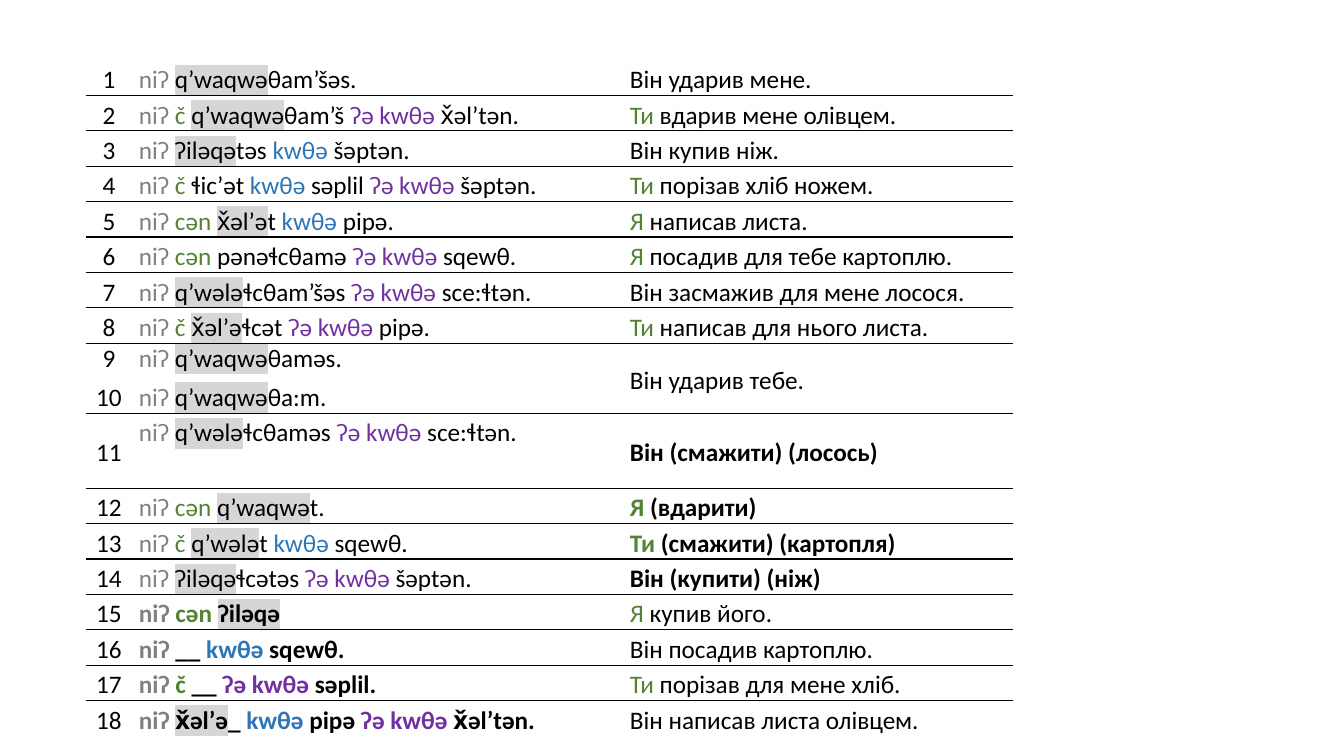
from pptx import Presentation
from pptx.dml.color import RGBColor
from pptx.enum.text import MSO_ANCHOR, PP_ALIGN
from pptx.oxml import parse_xml
from pptx.oxml.ns import nsdecls
from pptx.util import Pt

MIDDLE, TOP = MSO_ANCHOR.MIDDLE, MSO_ANCHOR.TOP
CENTER, LEFT = PP_ALIGN.CENTER, PP_ALIGN.LEFT
PX = 914400 / 100.8

THEME = {
    "font": "Calibri",
    "size": 18,
    "text": "000000",
    "stem": "000000",
    "particle": "808080",
    "subject": "548235",
    "object": "2E75B6",
    "oblique": "7030A0",
    "highlight": "D7D5D8",
    "rule": "000000",
}


def px(n):
    return round(n * PX)


def add_run(p, text, role, bold):
    r = p.add_run()
    r.text = text
    r.font.name = THEME["font"]
    r.font.size = Pt(THEME["size"])
    r.font.bold = bold
    r.font.color.rgb = RGBColor.from_string(THEME[role])
    if role == "stem":
        fill = r.font._element.find("{*}solidFill")
        fill.addnext(parse_xml(
            f'<a:highlight {nsdecls("a")}><a:srgbClr val="{THEME["highlight"]}"/></a:highlight>'))


NI = ("niʔ ", "particle")
CH = ("č ", "subject")
CEN = ("cən ", "subject")
OBJ = ("kwθə ", "object")
OBL = ("ʔə kwθə ", "oblique")
HIT = ("q’waqwə", "stem")
BUY = ("ʔiləqə", "stem")
WRITE = ("x̌əl’ə", "stem")
ROAST = ("q’wələ", "stem")
YOU = ("Ти", "subject")
I = ("Я", "subject")

SENTENCES = [
    (["1"], [[NI, HIT, "θam’šəs."]], ["Він ударив мене."]),
    (["2"], [[NI, CH, HIT, "θam’š ", OBL, "x̌əl’tən."]], [YOU, " вдарив мене олівцем."]),
    (["3"], [[NI, BUY, "təs ", OBJ, "šəptən."]], ["Він купив ніж."]),
    (["4"], [[NI, CH, "ɬic’ət ", OBJ, "səplil ", OBL, "šəptən."]], [YOU, " порізав хліб ножем."]),
    (["5"], [[NI, CEN, WRITE, "t ", OBJ, "pipə."]], [I, " написав листа."]),
    (["6"], [[NI, CEN, "pənəɬcθamə ", OBL, "sqewθ."]], [I, " посадив для тебе картоплю."]),
    (["7"], [[NI, ROAST, "ɬcθam’šəs ", OBL, "sce:ɬtən."]], ["Він засмажив для мене лосося."]),
    (["8"], [[NI, CH, WRITE, "ɬcət ", OBL, "pipə."]], [YOU, " написав для нього листа."]),
    (["9", "10"], [[NI, HIT, "θaməs."], [NI, HIT, "θa:m."]], ["Він ударив тебе."]),
    (["11"], [[NI, ROAST, "ɬcθaməs ", OBL, "sce:ɬtən."]], ["Він (смажити) (лосось)"]),
    (["12"], [[NI, CEN, HIT, "t."]], [I, " (вдарити)"]),
    (["13"], [[NI, CH, ROAST, "t ", OBJ, "sqewθ."]], [YOU, " (смажити) (картопля)"]),
    (["14"], [[NI, BUY, "ɬcətəs ", OBL, "šəptən."]], ["Він (купити) (ніж)"]),
    (["15"], [[NI, CEN, BUY]], [I, " купив його."]),
    (["16"], [[NI, "__ ", OBJ, "sqewθ."]], ["Він посадив картоплю."]),
    (["17"], [[NI, CH, "__ ", OBL, "səplil."]], [YOU, " порізав для мене хліб."]),
    (["18"], [[NI, WRITE, "_ ", OBJ, "pipə ", OBL, "x̌əl’tən."]], ["Він написав листа олівцем."]),
]
COLS = [46, 491, 390]
ROW = 35
TALL_ROWS = {"9": 70, "11": 75}
BOLD_TRANSLATIONS = ["11", "12", "13", "14"]
BOLD_SENTENCES = ["15", "16", "17", "18"]

prs = Presentation()
prs.slide_width, prs.slide_height = px(1344), px(756)
s = prs.slides.add_slide(prs.slide_layouts[6])

heights = [TALL_ROWS.get(numbers[0], ROW) for numbers, _, _ in SENTENCES]
table = s.shapes.add_table(len(SENTENCES), len(COLS), px(86), px(60),
                           px(sum(COLS)), px(sum(heights))).table
table.first_row = table.horz_banding = False
for col, width in zip(table.columns, COLS):
    col.width = px(width)

last = len(SENTENCES) - 1
for i, (numbers, sentences, translation) in enumerate(SENTENCES):
    table.rows[i].height = px(heights[i])
    number = numbers[0]
    contents = [[[n] for n in numbers], sentences, [translation]]
    bolds = [False, number in BOLD_SENTENCES, number in BOLD_TRANSLATIONS]
    for j, paragraphs in enumerate(contents):
        cell = table.cell(i, j)
        cell.margin_left = cell.margin_right = px(7)
        cell.margin_top = cell.margin_bottom = 0
        cell.vertical_anchor = TOP if number == "11" and j == 1 else MIDDLE
        tcPr = cell._tc.get_or_add_tcPr()
        for side, ruled in (("L", False), ("R", False), ("T", i > 0), ("B", i < last)):
            line = (f'<a:solidFill><a:srgbClr val="{THEME["rule"]}"/></a:solidFill>'
                    if ruled else "<a:noFill/>")
            tcPr.append(parse_xml(f'<a:ln{side} {nsdecls("a")} w="12700">{line}</a:ln{side}>'))
        cell.fill.background()
        tf = cell.text_frame
        for k, runs in enumerate(paragraphs):
            p = tf.add_paragraph() if k else tf.paragraphs[0]
            p.alignment = LEFT if j else CENTER
            p.line_spacing = 1.0 if len(paragraphs) > 1 else 1.15
            p.space_before = p.space_after = Pt(3)
            for run in runs:
                text, role = (run, "text") if isinstance(run, str) else run
                add_run(p, text, role, bolds[j])

prs.save("out.pptx")
